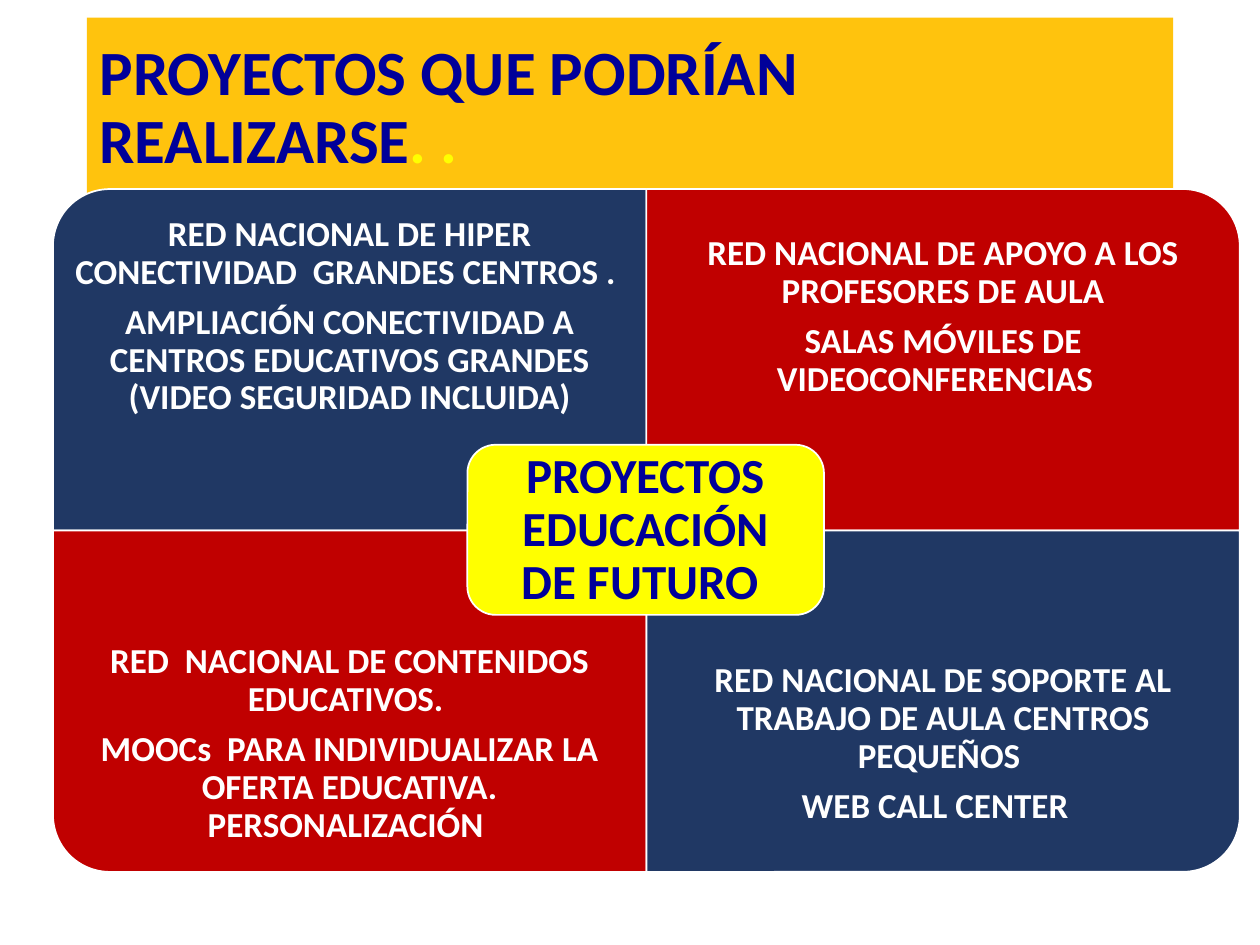
"""Build a slide with a title and a four-panel matrix of education projects."""
from pptx import Presentation
from pptx.dml.color import RGBColor
from pptx.enum.shapes import MSO_SHAPE
from pptx.enum.text import MSO_ANCHOR, MSO_AUTO_SIZE, PP_ALIGN
from pptx.util import Inches, Pt

CORNER_PANEL = MSO_SHAPE.ROUND_1_RECTANGLE
ROUNDED = MSO_SHAPE.ROUNDED_RECTANGLE
MIDDLE = MSO_ANCHOR.MIDDLE
NO_AUTOFIT = MSO_AUTO_SIZE.NONE
LEFT, CENTER = PP_ALIGN.LEFT, PP_ALIGN.CENTER

AMBER = RGBColor(0xFF, 0xC3, 0x0D)
BLUE = RGBColor(0x00, 0x00, 0x99)
YELLOW = RGBColor(0xFF, 0xFF, 0x00)
NAVY = RGBColor(0x20, 0x38, 0x64)
RED = RGBColor(0xC0, 0x00, 0x00)
WHITE = RGBColor(0xFF, 0xFF, 0xFF)

FONT = "Calibri"
MATRIX_LEFT, MATRIX_TOP = 0.42, 1.5
PANEL_WIDTH, PANEL_HEIGHT = 4.71, 2.71
TEXT_HEIGHT = 2.03

PANELS = [
    (0, 0, 270, NAVY, [
        "RED NACIONAL DE HIPER CONECTIVIDAD  GRANDES CENTROS . ",
        "AMPLIACIÓN CONECTIVIDAD A CENTROS EDUCATIVOS GRANDES (VIDEO SEGURIDAD INCLUIDA)"]),
    (1, 0, 0, RED, [
        "RED NACIONAL DE APOYO A LOS PROFESORES DE AULA",
        "SALAS MÓVILES DE VIDEOCONFERENCIAS  "]),
    (0, 1, 180, RED, [
        "RED  NACIONAL DE CONTENIDOS EDUCATIVOS. ",
        "MOOCs  PARA INDIVIDUALIZAR LA OFERTA EDUCATIVA. PERSONALIZACIÓN "]),
    (1, 1, 90, NAVY, [
        "RED NACIONAL DE SOPORTE AL TRABAJO DE AULA CENTROS PEQUEÑOS ",
        "WEB CALL CENTER  "]),
]


def add_panel(shapes, kind, left, top, width, height, color):
    panel = shapes.add_shape(kind, Inches(left), Inches(top), Inches(width), Inches(height))
    panel.shadow.inherit = False
    panel.fill.solid()
    panel.fill.fore_color.rgb = color
    panel.line.color.rgb = WHITE
    panel.line.width = Pt(1)
    return panel


def add_label(shapes, left, top, width, height, inset, lines, size, color):
    box = shapes.add_textbox(Inches(left), Inches(top), Inches(width), Inches(height))
    frame = box.text_frame
    frame.word_wrap = True
    frame.vertical_anchor = MIDDLE
    frame.margin_left = frame.margin_right = Inches(inset)
    frame.margin_top = frame.margin_bottom = Inches(inset)
    frame.text = "\n".join(lines)
    for para in frame.paragraphs:
        para.alignment = CENTER
        para.line_spacing = 0.9
        para.space_after = Pt(round(size * 0.35))
        para.font.name = FONT
        para.font.size = Pt(size)
        para.font.bold = True
        para.font.color.rgb = color


deck = Presentation()
deck.slide_width, deck.slide_height = Inches(10), Inches(7.5)
page = deck.slides.add_slide(deck.slide_layouts[5])

title = page.shapes.title
title.left, title.top = Inches(0.69), Inches(0.14)
title.width, title.height = Inches(8.62), Inches(1.45)
title.fill.solid()
title.fill.fore_color.rgb = AMBER
frame = title.text_frame
frame.auto_size = NO_AUTOFIT
frame.vertical_anchor = MIDDLE
frame.margin_right = Inches(0.5)
para = frame.paragraphs[0]
para.alignment = LEFT
para.line_spacing = 0.9
para.font.name = FONT
para.font.size = Pt(36)
para.font.bold = True
for text, color in [("PROYECTOS QUE PODRÍAN REALIZARSE", BLUE), (". .", YELLOW)]:
    span = para.add_run()
    span.text = text
    span.font.color.rgb = color

matrix = page.shapes.add_group_shape().shapes
for column, row, rotation, color, lines in PANELS:
    left = MATRIX_LEFT + column * PANEL_WIDTH
    top = MATRIX_TOP + row * PANEL_HEIGHT
    width, height = PANEL_WIDTH, PANEL_HEIGHT
    if rotation % 180:
        width, height = height, width
    panel = add_panel(matrix, CORNER_PANEL, left + (PANEL_WIDTH - width) / 2,
                      top + (PANEL_HEIGHT - height) / 2, width, height, color)
    panel.rotation = rotation
    text_top = top + row * (PANEL_HEIGHT - TEXT_HEIGHT)
    add_label(matrix, left, text_top, PANEL_WIDTH, TEXT_HEIGHT, 0.16, lines, 20, WHITE)

add_panel(matrix, ROUNDED, 3.71, 3.53, 2.83, 1.35, YELLOW)
add_label(matrix, 3.78, 3.6, 2.69, 1.22, 0.12, ["PROYECTOS EDUCACIÓN DE FUTURO "], 28, BLUE)

deck.save("out.pptx")
